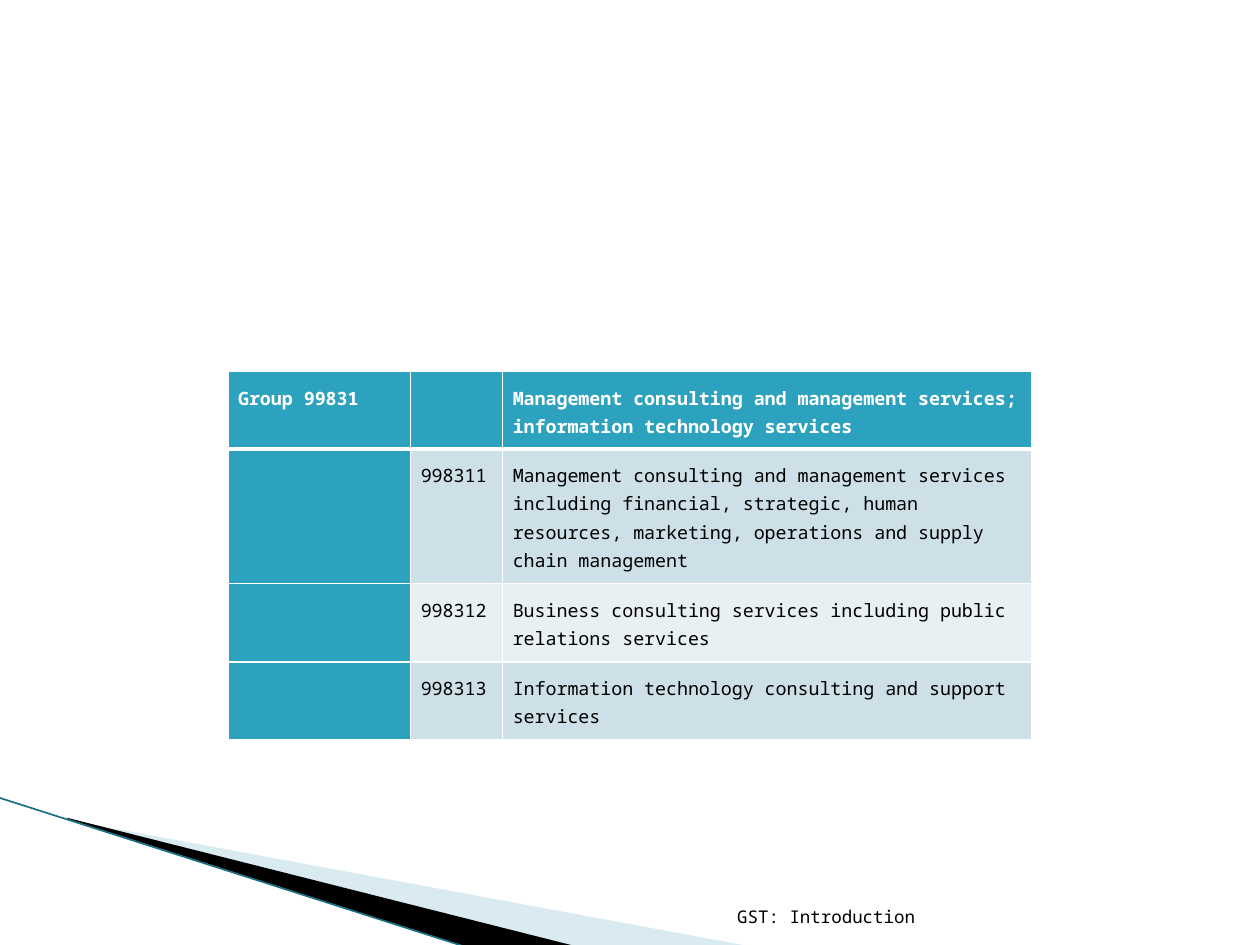
from lxml import etree
from pptx import Presentation
from pptx.dml.color import RGBColor
from pptx.enum.shapes import MSO_CONNECTOR
from pptx.enum.text import MSO_ANCHOR, PP_ALIGN
from pptx.oxml.ns import qn
from pptx.util import Inches, Pt

STRAIGHT = MSO_CONNECTOR.STRAIGHT
BOTTOM = MSO_ANCHOR.BOTTOM
LEFT, RIGHT = PP_ALIGN.LEFT, PP_ALIGN.RIGHT

FONT = "Noto Sans Mono"
COLORS = {
    "white": "FFFFFF",
    "black": "000000",
    "teal": "2DA2BF",
    "odd_row": "CDE0E8",
    "even_row": "E8F0F4",
    "pale_wedge": "A0CBDC",
    "edge": "1B7085",
}

SERVICE_CODES = [
    ("Group 99831", "", "Management consulting and management services; information technology services"),
    ("", "998311", "Management consulting and management services including financial, strategic, "
                   "human resources, marketing, operations and supply chain management"),
    ("", "998312", "Business consulting services including public relations services"),
    ("", "998313", "Information technology consulting and support services"),
]
COLUMN_WIDTHS = [1.45, 0.73, 4.2]
ROW_HEIGHTS = [0.61, 1.07, 0.62, 0.62]
FOOTER = "GST: Introduction"
WEDGES = [
    ([(0.55, 6.51), (5.95, 7.51), (4.56, 7.51), (0.55, 6.5)], "pale_wedge", 40),
    ([(0.53, 6.49), (4.57, 7.51), (3.72, 7.52), (0.54, 6.5)], "black", 100),
]


def rgb(name):
    return RGBColor.from_string(COLORS[name])


def write(frame, text, size=10.5, color="black", bold=False, align=LEFT, spacing=1.0):
    paragraph = frame.paragraphs[0]
    paragraph.alignment = align
    paragraph.line_spacing = spacing
    run = paragraph.add_run()
    run.text = text
    run.font.name = FONT
    run.font.size = Pt(size)
    run.font.bold = bold
    run.font.color.rgb = rgb(color)


def add_wedge(slide, points, color, opacity):
    corners = [(Inches(x), Inches(y)) for x, y in points]
    builder = slide.shapes.build_freeform(*corners[0])
    builder.add_line_segments(corners[1:], close=True)
    wedge = builder.convert_to_shape()
    wedge.shadow.inherit = False
    wedge.fill.solid()
    wedge.fill.fore_color.rgb = rgb(color)
    wedge.line.fill.background()
    if opacity < 100:
        tint = wedge.fill._xPr.find(qn("a:solidFill"))[0]
        etree.SubElement(tint, qn("a:alpha"), val=str(opacity * 1000))


def add_borders(cell, widths):
    properties = cell._tc.get_or_add_tcPr()
    for side, width in widths.items():
        border = etree.SubElement(properties, qn(f"a:ln{side}"), w=str(Pt(width)))
        fill = etree.SubElement(border, qn("a:solidFill"))
        etree.SubElement(fill, qn("a:srgbClr"), val=COLORS["white"])


def add_service_table(slide):
    table = slide.shapes.add_table(
        len(SERVICE_CODES), len(COLUMN_WIDTHS), Inches(1.81), Inches(2.95),
        Inches(sum(COLUMN_WIDTHS)), Inches(sum(ROW_HEIGHTS))).table
    table.first_col = True
    for column, width in zip(table.columns, COLUMN_WIDTHS):
        column.width = Inches(width)
    for r, (entries, height) in enumerate(zip(SERVICE_CODES, ROW_HEIGHTS)):
        table.rows[r].height = Inches(height)
        band = "odd_row" if r % 2 else "even_row"
        for c, entry in enumerate(entries):
            cell = table.cell(r, c)
            heading = r == 0 or c == 0
            add_borders(cell, {"L": 1, "R": 1, "T": 3 if r == 1 else 1, "B": 3 if r == 0 else 1})
            cell.fill.solid()
            cell.fill.fore_color.rgb = rgb("teal" if heading else band)
            cell.margin_left = cell.margin_right = Inches(0.08)
            cell.margin_top = cell.margin_bottom = Inches(0.08)
            if entry:
                write(cell.text_frame, entry, color="white" if heading else "black",
                      bold=heading, spacing=1.15)


def main():
    deck = Presentation()
    deck.slide_width, deck.slide_height = Inches(10), Inches(7.5)
    slide = deck.slides.add_slide(deck.slide_layouts[6])

    for points, color, opacity in WEDGES:
        add_wedge(slide, points, color, opacity)
    edge = slide.shapes.add_connector(
        STRAIGHT, Inches(-0.01), Inches(6.33), Inches(3.71), Inches(7.52))
    edge.line.color.rgb = rgb("edge")
    edge.line.width = Pt(0.95)
    etree.SubElement(edge._element.spPr, qn("a:effectLst"))

    add_service_table(slide)

    footer = slide.shapes.add_textbox(Inches(4.79), Inches(7.01), Inches(2.57), Inches(0.4)).text_frame
    footer.word_wrap = True
    footer.vertical_anchor = BOTTOM
    write(footer, FOOTER, size=10, align=RIGHT)

    deck.save("out.pptx")


if __name__ == "__main__":
    main()
